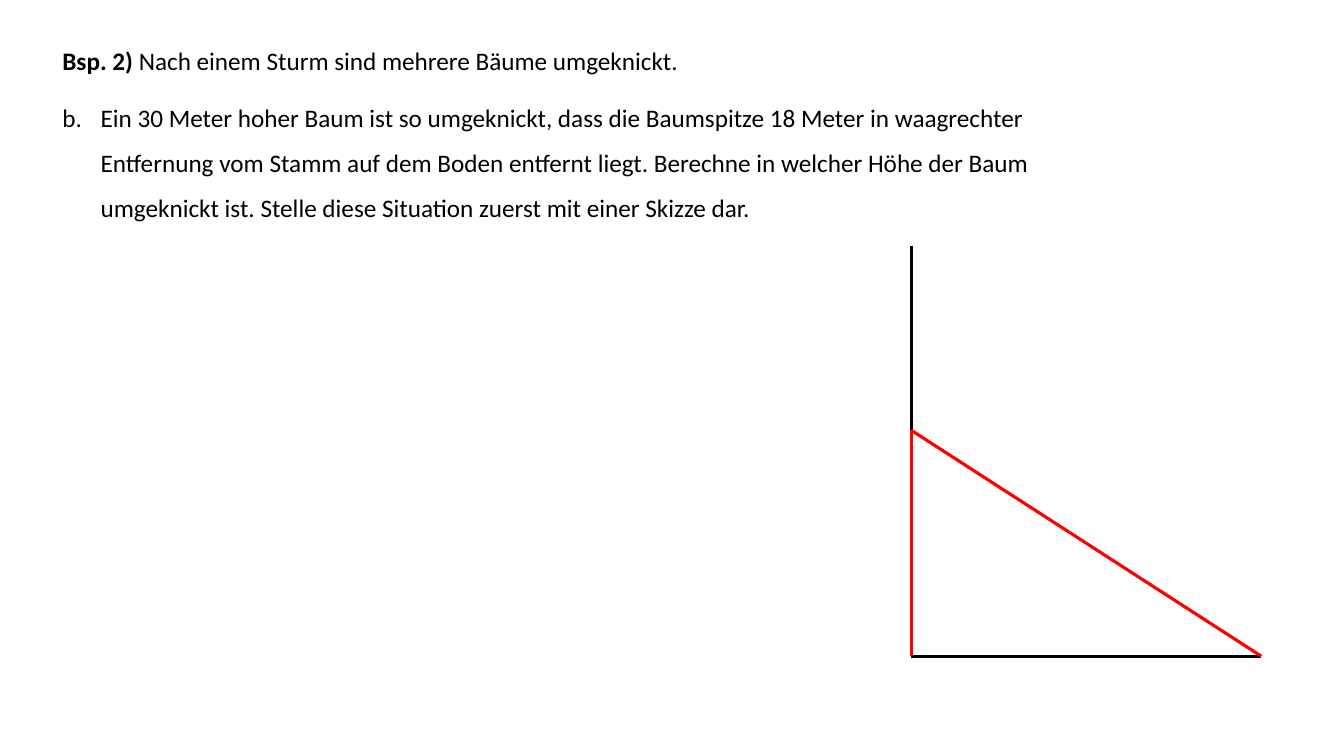
from dataclasses import dataclass

from lxml.etree import SubElement
from pptx import Presentation
from pptx.dml.color import RGBColor
from pptx.enum.shapes import MSO_CONNECTOR
from pptx.enum.text import MSO_AUTO_SIZE
from pptx.oxml.ns import qn
from pptx.util import Inches, Pt


@dataclass(frozen=True)
class Theme:
    font: str = "Calibri"
    text_size: int = 18
    line_width: float = 2.25
    black: RGBColor = RGBColor(0, 0, 0)
    red: RGBColor = RGBColor(255, 0, 0)


THEME = Theme()

LABEL = "Bsp. 2)"
INTRO = " Nach einem Sturm sind mehrere Bäume umgeknickt."
TASK = (
    "Ein 30 Meter hoher Baum ist so umgeknickt, dass die Baumspitze 18 Meter in "
    "waagrechter Entfernung vom Stamm auf dem Boden entfernt liegt. Berechne in "
    "welcher Höhe der Baum umgeknickt ist. Stelle diese Situation zuerst mit einer "
    "Skizze dar."
)
TASK_NUMBER = 2
TASK_INDENT = 0.38
TEXT_BOX = (0.52, 0.38, 10.85, 1.85)

TRUNK_X, GROUND_Y = 9.04, 6.51
TREE_TOP = (TRUNK_X, 2.44)
BREAK_POINT = (TRUNK_X, 4.27)
TREE_FOOT = (TRUNK_X, GROUND_Y)
FALLEN_TIP = (12.51, GROUND_Y)

SKETCH_LINES = [
    (TREE_TOP, TREE_FOOT, THEME.black),
    (TREE_FOOT, FALLEN_TIP, THEME.black),
    (BREAK_POINT, FALLEN_TIP, THEME.red),
    (BREAK_POINT, TREE_FOOT, THEME.red),
]


def number_with_letter(paragraph, start, indent):
    """Give the paragraph a hanging a., b., c. number."""
    properties = paragraph._p.get_or_add_pPr()
    properties.set("marL", str(Inches(indent)))
    properties.set("indent", str(-Inches(indent)))
    SubElement(properties, qn("a:buFont"), typeface="+mj-lt")
    SubElement(properties, qn("a:buAutoNum"), type="alphaLcPeriod", startAt=str(start))


def format_paragraph(paragraph, line_spacing, space_after):
    paragraph.line_spacing = line_spacing
    paragraph.space_after = Pt(space_after)
    paragraph.font.name = THEME.font
    paragraph.font.size = Pt(THEME.text_size)
    paragraph.font.color.rgb = THEME.black


def add_exercise(slide):
    text_frame = slide.shapes.add_textbox(*map(Inches, TEXT_BOX)).text_frame
    text_frame.word_wrap = True
    text_frame.auto_size = MSO_AUTO_SIZE.SHAPE_TO_FIT_TEXT

    intro = text_frame.paragraphs[0]
    label = intro.add_run()
    label.text = LABEL
    label.font.bold = True
    intro.add_run().text = INTRO
    format_paragraph(intro, 1.07, 8)

    task = text_frame.add_paragraph()
    task.add_run().text = TASK
    number_with_letter(task, TASK_NUMBER, TASK_INDENT)
    format_paragraph(task, 1.5, 6)


def add_sketch_line(slide, start, end, color):
    connector = slide.shapes.add_connector(
        MSO_CONNECTOR.STRAIGHT, *map(Inches, start + end)
    )
    connector.line.color.rgb = color
    connector.line.width = Pt(THEME.line_width)
    SubElement(connector._element.spPr, qn("a:effectLst"))


def main():
    presentation = Presentation()
    presentation.slide_width = Inches(13.33)
    presentation.slide_height = Inches(7.5)
    slide = presentation.slides.add_slide(presentation.slide_layouts[6])
    add_exercise(slide)
    for start, end, color in SKETCH_LINES:
        add_sketch_line(slide, start, end, color)
    presentation.save("out.pptx")


if __name__ == "__main__":
    main()
